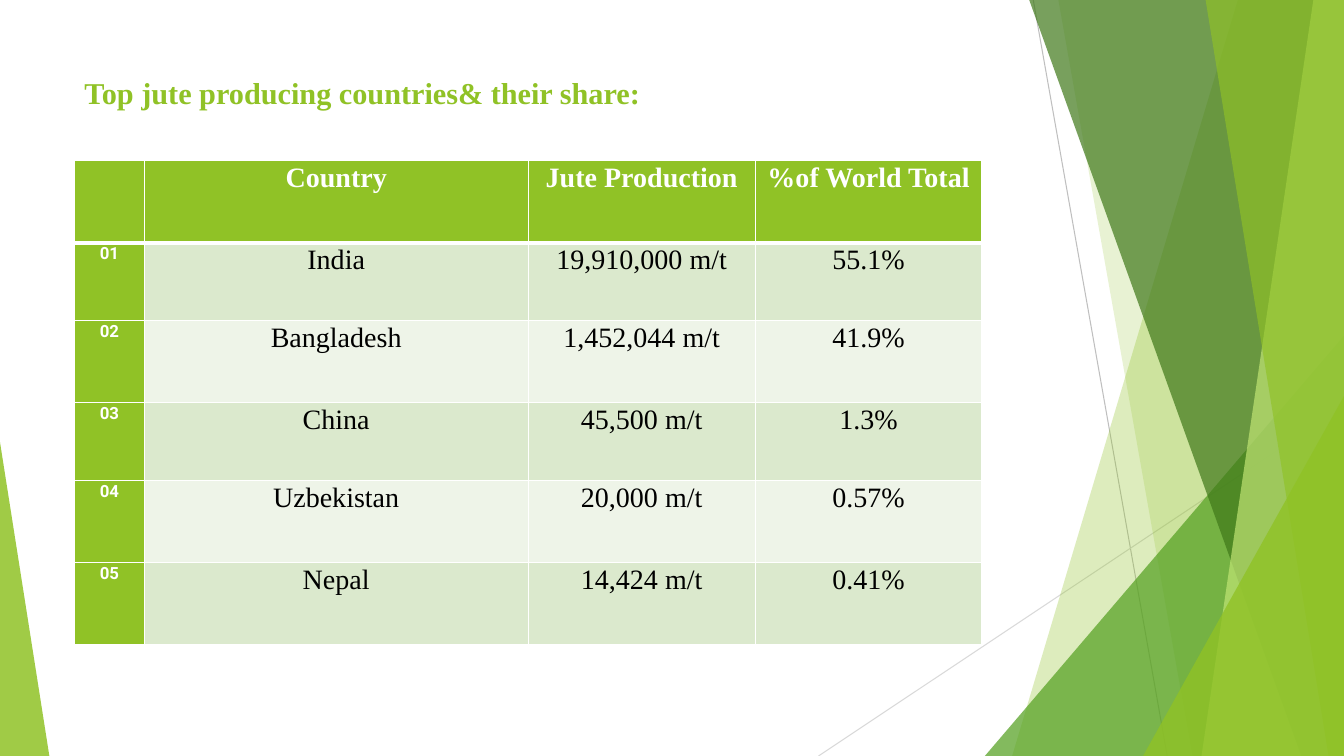
from dataclasses import dataclass

from lxml.etree import SubElement
from pptx import Presentation
from pptx.dml.color import RGBColor
from pptx.enum.shapes import MSO_CONNECTOR, MSO_SHAPE
from pptx.enum.text import MSO_ANCHOR, PP_ALIGN
from pptx.oxml.ns import qn
from pptx.util import Inches, Pt


@dataclass(frozen=True)
class Theme:
    """Colours, fonts and type sizes of the deck."""
    green: str = "90C226"
    grass: str = "54A021"
    forest: str = "3F7819"
    lime: str = "C0E474"
    white: str = "FFFFFF"
    black: str = "000000"
    gray: str = "BFBFBF"
    light_gray: str = "D9D9D9"
    bands: tuple = ("DBE9CD", "EEF4E8")
    serif: str = "Times New Roman"
    sans: str = "Roboto"
    title_size: float = 21.6
    table_size: float = 20
    number_size: float = 12
    hairline: float = 0.75
    cell_line: float = 1
    header_line: float = 3


def apply(target, values):
    """Set every attribute named in a dict of format values."""
    for name, value in values.items():
        setattr(target, name, value)


class SlideBuilder:
    """Draws elements whose lengths are percentages of the slide's size."""

    def __init__(self, deck, theme):
        """Add a blank slide to the deck."""
        self.deck, self.theme = deck, theme
        self.slide = deck.slides.add_slide(deck.slide_layouts[6])

    def across(self, share):
        """Turn a share of the width into a length."""
        return round(self.deck.slide_width * share / 100)

    def down(self, share):
        """Turn a share of the height into a length."""
        return round(self.deck.slide_height * share / 100)

    def line(self, start, end, color):
        """Draw a thin straight line."""
        connector = self.slide.shapes.add_connector(
            MSO_CONNECTOR.STRAIGHT, self.across(start[0]), self.down(start[1]),
            self.across(end[0]), self.down(end[1]))
        connector.line.color.rgb = RGBColor.from_string(color)
        connector.line.width = Pt(self.theme.hairline)
        SubElement(connector.element.spPr, qn("a:effectLst"))

    def paint(self, shape, color, opacity):
        """Give a shape a translucent fill without outline or shadow."""
        shape.shadow.inherit = False
        shape.fill.solid()
        shape.fill.fore_color.rgb = RGBColor.from_string(color)
        shape.line.fill.background()
        for tint in shape.element.spPr.iter(qn("a:srgbClr")):
            SubElement(tint, qn("a:alpha"), val=str(opacity * 1000))

    def pane(self, top, bottom, color, opacity):
        """Fill the area between a slanted edge and the right of the slide."""
        right, floor = self.across(100), self.down(100)
        outline = self.slide.shapes.build_freeform(self.across(top), 0)
        outline.add_line_segments(
            [(right, 0), (right, floor), (self.across(bottom), floor)])
        self.paint(outline.convert_to_shape(), color, opacity)

    def triangle(self, left, top, right, apex, color, opacity):
        """Draw a triangle standing on the bottom of the slide."""
        shape = self.slide.shapes.add_shape(
            MSO_SHAPE.ISOSCELES_TRIANGLE, self.across(left), self.down(top),
            self.across(right - left), self.down(100 - top))
        shape.adjustments[0] = apex
        self.paint(shape, color, opacity)

    def add_span(self, para, text, color, **font):
        """Add a span of formatted text to a paragraph."""
        span = para.add_run()
        span.text = text
        apply(span.font, font)
        span.font.color.rgb = RGBColor.from_string(color)

    def title(self, text, left, top, width, height):
        """Place the slide's heading."""
        box = self.slide.shapes.add_textbox(
            self.across(left), self.down(top), self.across(width), self.down(height))
        apply(box.text_frame, {"word_wrap": True, "margin_top": Inches(0.07),
                               "vertical_anchor": MSO_ANCHOR.TOP})
        self.add_span(box.text_frame.paragraphs[0], text, self.theme.green,
                      name=self.theme.serif, size=Pt(self.theme.title_size), bold=True)

    def border(self, cell, row):
        """Rule a cell in white, heavier under the header."""
        theme = self.theme
        widths = {"L": theme.cell_line, "R": theme.cell_line,
                  "T": theme.header_line if row == 1 else theme.cell_line,
                  "B": theme.header_line if row == 0 else theme.cell_line}
        properties = cell._tc.get_or_add_tcPr()
        for side, width in widths.items():
            rule = SubElement(properties, qn(f"a:ln{side}"), w=str(Pt(width)))
            fill = SubElement(rule, qn("a:solidFill"))
            SubElement(fill, qn("a:srgbClr"), val=theme.white)

    def cell(self, cell, text, row, column):
        """Format and fill one table cell."""
        theme = self.theme
        strong = row == 0 or column == 0
        numbered = row > 0 and column == 0
        self.border(cell, row)
        cell.fill.solid()
        cell.fill.fore_color.rgb = RGBColor.from_string(
            theme.green if strong else theme.bands[(row - 1) % 2])
        apply(cell, {"margin_left": Inches(0.07), "margin_right": Inches(0.07),
                     "margin_top": 0, "margin_bottom": 0,
                     "vertical_anchor": MSO_ANCHOR.TOP})
        para = cell.text_frame.paragraphs[0]
        apply(para, {"alignment": PP_ALIGN.CENTER, "line_spacing": 1.07})
        if text:
            self.add_span(para, text, theme.white if strong else theme.black,
                          name=theme.sans if numbered else theme.serif,
                          size=Pt(theme.number_size if numbered else theme.table_size),
                          bold=strong)

    def table(self, records, left, top, widths, heights):
        """Draw a table with a header row and a numbered first column."""
        table = self.slide.shapes.add_table(
            len(heights), len(widths), self.across(left), self.down(top),
            self.across(sum(widths)), self.down(sum(heights))).table
        apply(table, {"first_row": False, "horz_banding": False})
        for column, width in zip(table.columns, widths):
            column.width = self.across(width)
        for row, height in zip(table.rows, heights):
            row.height = self.down(height)
        for row, record in enumerate(records):
            for column, text in enumerate(record):
                self.cell(table.cell(row, column), text, row, column)


def main():
    """Build the jute production slide."""
    deck = Presentation()
    apply(deck, {"slide_width": Inches(13.33), "slide_height": Inches(7.5)})
    theme = Theme()
    page = SlideBuilder(deck, theme)

    page.line((76.88, 0), (86.85, 100), theme.gray)
    page.line((100, 53.7), (60.9, 100), theme.light_gray)
    page.pane(92.1, 75.31, theme.green, 30)
    page.pane(78.75, 88.72, theme.green, 20)
    page.triangle(73.28, 44.4, 100, 1, theme.grass, 72)
    page.pane(76.58, 96.82, theme.forest, 70)
    page.pane(97.72, 89.4, theme.lime, 70)
    page.pane(89.7, 98.85, theme.green, 65)
    page.triangle(85.05, 52.4, 100, 1, theme.green, 80)
    page.triangle(0, 58.5, 3.67, 0, theme.green, 85)

    page.title("Top jute producing countries& their share:", 5.55, 8.93, 70.5, 8)
    countries = [
        ("India", "19,910,000 m/t", "55.1%"),
        ("Bangladesh", "1,452,044 m/t", "41.9%"),
        ("China", "45,500 m/t", "1.3%"),
        ("Uzbekistan", "20,000 m/t", "0.57%"),
        ("Nepal", "14,424 m/t", "0.41%"),
    ]
    records = [("", "Country", "Jute Production", "%of World Total")]
    records += [(f"{rank:02}", *country) for rank, country in enumerate(countries, 1)]
    tall, short = 10.9, 10.27
    page.table(records, 5.55, 21.2, (5.18, 28.58, 16.88, 16.88),
               (tall, short, tall, short, tall, tall))
    deck.save("out.pptx")


if __name__ == "__main__":
    main()
